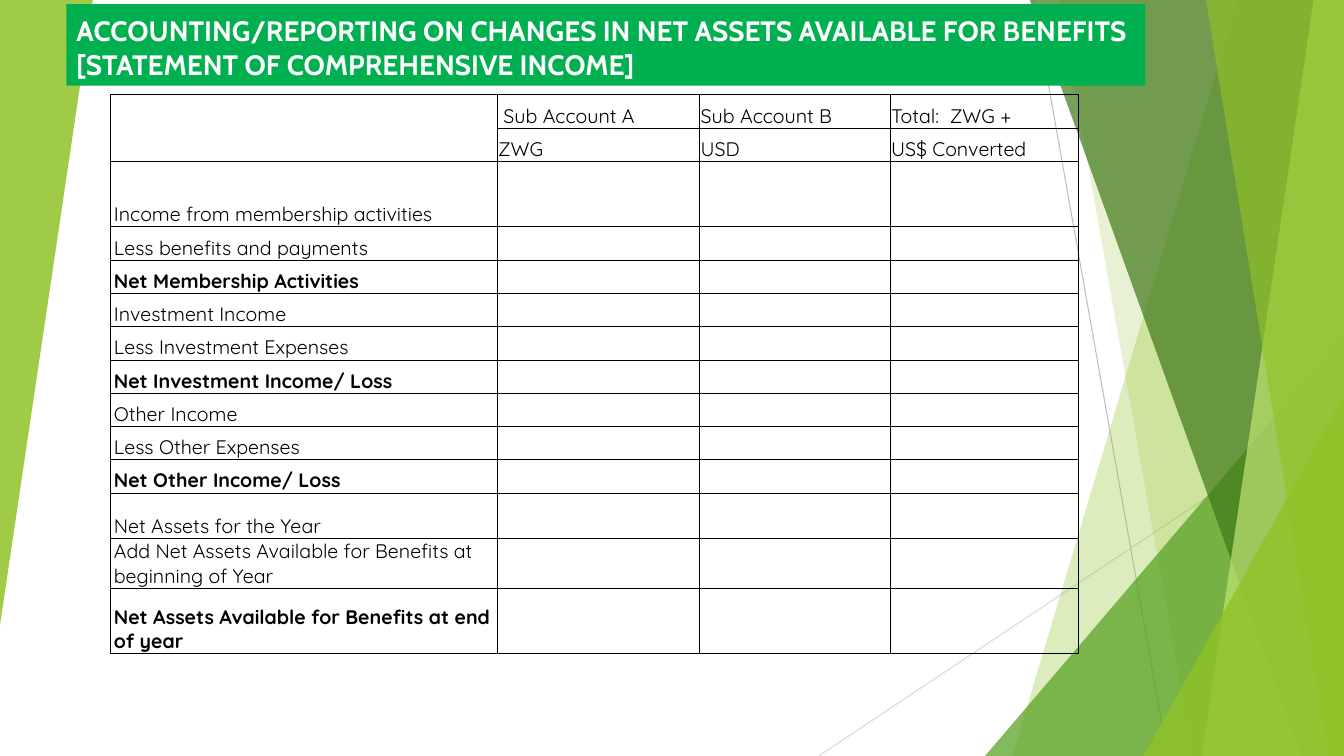
from dataclasses import dataclass

from lxml.etree import SubElement
from pptx import Presentation
from pptx.dml.color import RGBColor
from pptx.enum.shapes import MSO_CONNECTOR, MSO_SHAPE
from pptx.enum.text import MSO_ANCHOR, PP_ALIGN
from pptx.oxml.ns import qn
from pptx.shapes.autoshape import Shape
from pptx.shapes.shapetree import SlideShapes
from pptx.table import _Cell
from pptx.text.text import _Paragraph
from pptx.util import Emu, Pt

EMU_PER_PX = 9144  # 100 px to the inch
WIDTH, HEIGHT = 1333, 750

COLORS = {
    "lime": "90C226",
    "leaf": "54A021",
    "forest": "3F7819",
    "pale": "C0E474",
    "banner": "00B050",
    "white": "FFFFFF",
    "black": "000000",
    "gray": "BFBFBF",
    "light gray": "D9D9D9",
}


@dataclass(frozen=True)
class Ray:
    start: tuple[int, int]
    end: tuple[int, int]
    color: str


@dataclass(frozen=True)
class Shard:
    """A four-sided facet that runs from the top edge to the bottom right."""
    top_left: int
    bottom_left: int
    color: str
    opacity: int


@dataclass(frozen=True)
class Wedge:
    """A right-angled triangle with its upright side on the right before rotation."""
    left: int
    top: int
    width: int
    height: int
    color: str
    opacity: int
    rotation: int = 0


@dataclass(frozen=True)
class StatementRow:
    label: str
    height: int = 33
    is_total: bool = False


RAYS = [
    Ray((1025, 0), (1158, 750), "gray"),
    Ray((1333, 403), (812, 750), "light gray"),
]
FACETS = [
    Shard(1228, 1004, "lime", 30),
    Shard(1050, 1183, "lime", 20),
    Wedge(977, 333, 356, 417, "leaf", 72),
    Shard(1021, 1291, "forest", 70),
    Shard(1303, 1192, "pale", 70),
    Shard(1196, 1318, "lime", 65),
    Wedge(1134, 393, 199, 357, "lime", 80),
    Wedge(0, 0, 92, 620, "lime", 85, rotation=180),
]
TITLE_LINES = [
    "ACCOUNTING/REPORTING ON CHANGES IN NET ASSETS AVAILABLE FOR BENEFITS",
    "[STATEMENT OF COMPREHENSIVE INCOME]",
]
COLUMN_WIDTHS = [384, 201, 189, 187]
HEADINGS = [
    ["", " Sub Account A", "Sub Account B", "Total:  ZWG +"],
    ["", "ZWG", "USD", "US$ Converted"],
]
HEADING_HEIGHT = 33
STATEMENT = [
    StatementRow("Income from membership activities", 65),
    StatementRow("Less benefits and payments"),
    StatementRow("Net Membership Activities", is_total=True),
    StatementRow("Investment Income"),
    StatementRow("Less Investment Expenses"),
    StatementRow("Net Investment Income/ Loss", is_total=True),
    StatementRow("Other Income"),
    StatementRow("Less Other Expenses"),
    StatementRow("Net Other Income/ Loss", is_total=True),
    StatementRow("Net Assets for the Year", 45),
    StatementRow("Add Net Assets Available for Benefits at beginning of Year", 49),
    StatementRow("Net Assets Available for Benefits at end of year", 65, True),
]


def px(length: int) -> Emu:
    return Emu(length * EMU_PER_PX)


def rgb(color: str) -> RGBColor:
    return RGBColor.from_string(COLORS[color])


def paint(shape: Shape, color: str, opacity: int = 100) -> None:
    shape.shadow.inherit = False
    shape.line.fill.background()
    shape.fill.solid()
    shape.fill.fore_color.rgb = rgb(color)
    if opacity < 100:
        tint = shape.element.spPr.find(qn("a:solidFill")).find(qn("a:srgbClr"))
        SubElement(tint, qn("a:alpha")).set("val", str(opacity * 1000))


def style_text(paragraph: _Paragraph, font: str, size: int, color: str, bold: bool) -> None:
    for run in paragraph.runs:
        run.font.name = font
        run.font.size = Pt(size)
        run.font.bold = bold
        run.font.color.rgb = rgb(color)


def draw_ray(shapes: SlideShapes, ray: Ray) -> None:
    line = shapes.add_connector(
        MSO_CONNECTOR.STRAIGHT, *map(px, ray.start), *map(px, ray.end))
    line.line.color.rgb = rgb(ray.color)
    line.line.width = Pt(0.75)
    SubElement(line.element.spPr, qn("a:effectLst"))


def draw_facet(shapes: SlideShapes, facet: Shard | Wedge) -> None:
    if isinstance(facet, Shard):
        outline = shapes.build_freeform(facet.top_left, -1, scale=EMU_PER_PX)
        outline.add_line_segments(
            [(WIDTH, -1), (WIDTH, HEIGHT), (facet.bottom_left, HEIGHT)], close=True)
        shape = outline.convert_to_shape()
    else:
        shape = shapes.add_shape(
            MSO_SHAPE.ISOSCELES_TRIANGLE,
            px(facet.left), px(facet.top), px(facet.width), px(facet.height))
        shape.adjustments[0] = 1
        shape.rotation = facet.rotation
    paint(shape, facet.color, facet.opacity)


def draw_title(shapes: SlideShapes) -> None:
    banner = shapes.add_shape(MSO_SHAPE.RECTANGLE, px(66), px(4), px(1070), px(81))
    paint(banner, "banner")
    frame = banner.text_frame
    frame.word_wrap = True
    frame.vertical_anchor = MSO_ANCHOR.BOTTOM
    frame.text = "\n".join(TITLE_LINES)
    for paragraph in frame.paragraphs:
        paragraph.alignment = PP_ALIGN.LEFT
        style_text(paragraph, "Cabin", 20, "white", True)


def set_borders(cell: _Cell, hidden: str) -> None:
    """Rule all four sides in black except those whose letter is in hidden."""
    properties = cell._tc.get_or_add_tcPr()
    for side in "LRTB":
        border = SubElement(properties, qn(f"a:ln{side}"), w=str(Pt(0.5)))
        if side in hidden:
            SubElement(border, qn("a:noFill"))
        else:
            fill = SubElement(border, qn("a:solidFill"))
            SubElement(fill, qn("a:srgbClr"), val=COLORS["black"])


def fill_cell(cell: _Cell, text: str, bold: bool, side_margin: int, hidden: str) -> None:
    set_borders(cell, hidden)
    cell.fill.background()
    cell.vertical_anchor = MSO_ANCHOR.BOTTOM
    cell.margin_left = cell.margin_right = px(side_margin)
    cell.margin_top, cell.margin_bottom = px(1), px(0)
    paragraph = cell.text_frame.paragraphs[0]
    if text:
        paragraph.text = text
        style_text(paragraph, "Quicksand", 14, "black", bold)
    else:
        SubElement(paragraph._p, qn("a:endParaRPr"), sz="1400")


def draw_statement(shapes: SlideShapes) -> None:
    heights = [HEADING_HEIGHT] * len(HEADINGS) + [row.height for row in STATEMENT]
    table = shapes.add_table(
        len(heights), len(COLUMN_WIDTHS), px(109), px(94),
        px(sum(COLUMN_WIDTHS)), px(sum(heights))).table
    table.first_row = table.horz_banding = False
    for column, width in zip(table.columns, COLUMN_WIDTHS):
        column.width = px(width)
    for table_row, height in zip(table.rows, heights):
        table_row.height = px(height)

    for r, headings in enumerate(HEADINGS):
        for c, heading in enumerate(headings):
            hidden = "BT"[r] if c == 0 else ""
            fill_cell(table.cell(r, c), heading, False, 1, hidden)
    for r, row in enumerate(STATEMENT, start=len(HEADINGS)):
        for c in range(len(COLUMN_WIDTHS)):
            label = row.label if c == 0 else ""
            fill_cell(table.cell(r, c), label, row.is_total, 4, "")


def main() -> None:
    deck = Presentation()
    deck.slide_width, deck.slide_height = px(WIDTH), px(HEIGHT)
    shapes = deck.slides.add_slide(deck.slide_layouts[6]).shapes
    for ray in RAYS:
        draw_ray(shapes, ray)
    for facet in FACETS:
        draw_facet(shapes, facet)
    draw_title(shapes)
    draw_statement(shapes)
    deck.save("out.pptx")


if __name__ == "__main__":
    main()
